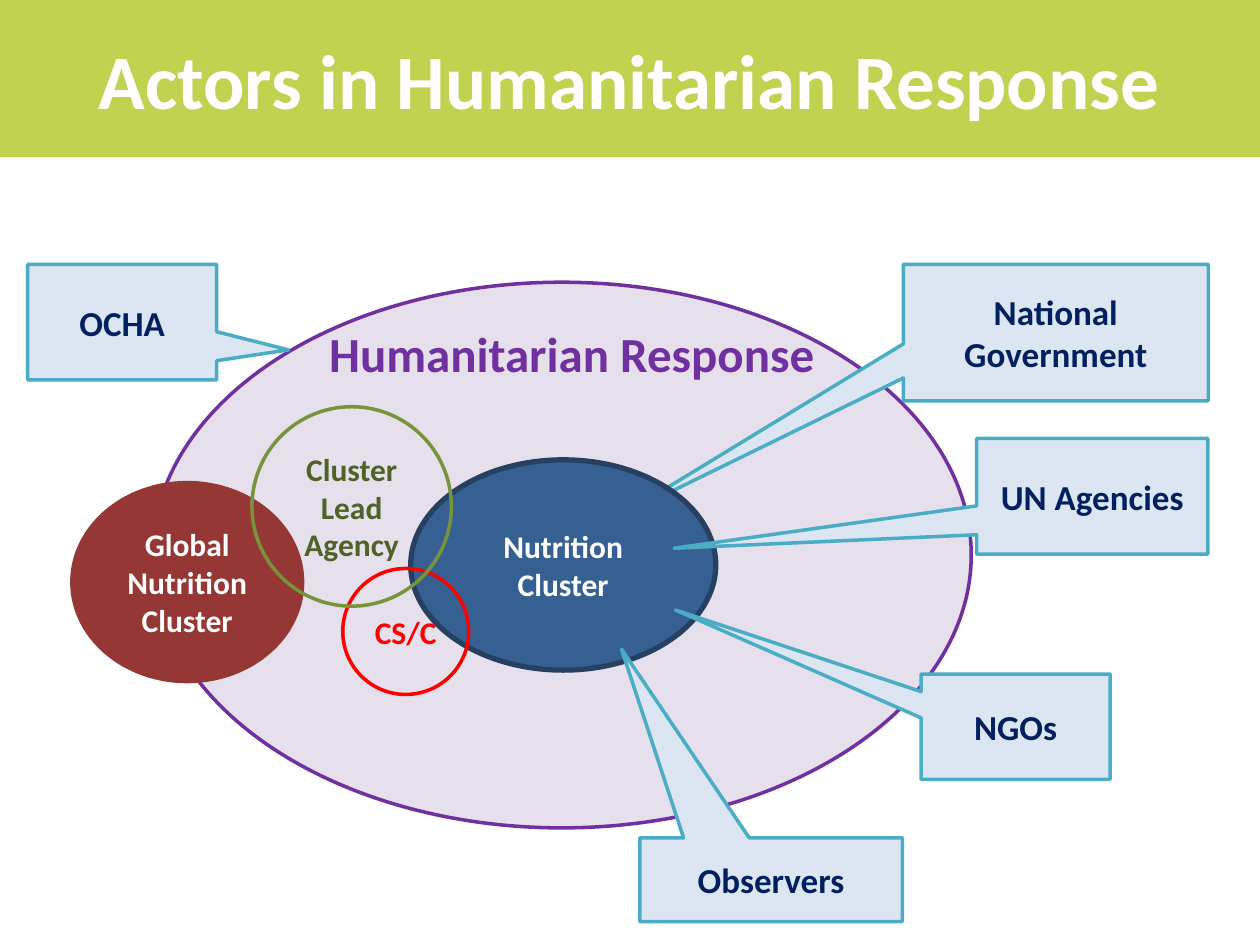
"""Build a slide mapping the actors in a humanitarian response."""
from dataclasses import dataclass

from pptx import Presentation
from pptx import util as u
from pptx.dml import color
from pptx.enum import shapes, text


@dataclass(frozen=True)
class Theme:
    """Colours and type sizes of the slide."""
    font: str = "Calibri"
    white: str = "FFFFFF"
    banner: str = "C1D150"
    response_fill: str = "E6E0EC"
    response: str = "7030A0"
    global_cluster: str = "953735"
    cluster_fill: str = "376092"
    cluster_line: str = "254061"
    lead_line: str = "77933C"
    lead_text: str = "4F6228"
    coordinator: str = "FF0000"
    actor_fill: str = "DCE6F2"
    actor_line: str = "4BACC6"
    actor_text: str = "002060"
    title_size: int = 44
    heading_size: int = 28
    actor_size: int = 20
    circle_size: int = 18


THEME = Theme()


def rgb(code):
    """Turn a hex code into a colour."""
    return color.RGBColor.from_string(code)


def place(box):
    """Turn left, top, width and height in centimetres into lengths."""
    return [u.Cm(value) for value in box]


def write(frame, wording, size, ink):
    """Put one centred bold run into a text frame."""
    frame.word_wrap = True
    frame.vertical_anchor = text.MSO_ANCHOR.MIDDLE
    paragraph = frame.paragraphs[0]
    paragraph.alignment = text.PP_ALIGN.CENTER
    run = paragraph.add_run()
    run.text = wording
    run.font.name = THEME.font
    run.font.size = u.Pt(size)
    run.font.bold = True
    run.font.color.rgb = rgb(ink)


def add_outlined(slide, preset, box, fill, line, weight=2):
    """Add a preset shape with an outline and an optional fill."""
    shape = slide.shapes.add_shape(preset, *place(box))
    shape.shadow.inherit = False
    if fill:
        shape.fill.solid()
        shape.fill.fore_color.rgb = rgb(fill)
    else:
        shape.fill.background()
    shape.line.color.rgb = rgb(line)
    shape.line.width = u.Pt(weight)
    return shape


def add_circle(slide, wording, box, fill, line, ink, weight=2):
    """Add a labelled ellipse."""
    circle = add_outlined(slide, shapes.MSO_SHAPE.OVAL, box, fill, line, weight)
    frame = circle.text_frame
    frame.margin_left = frame.margin_right = u.Cm(0.1)
    write(frame, wording, THEME.circle_size, ink)


def add_actor(slide, wording, box, tip):
    """Add a callout whose tip is an offset from its centre in box sizes."""
    actor = add_outlined(slide, shapes.MSO_SHAPE.RECTANGULAR_CALLOUT, box,
                         THEME.actor_fill, THEME.actor_line)
    actor.adjustments[0], actor.adjustments[1] = tip
    write(actor.text_frame, wording, THEME.actor_size, THEME.actor_text)


def add_title(slide, wording):
    """Turn the title placeholder into a full-width banner."""
    title = slide.shapes.title
    title.left, title.top, title.width, title.height = place((0, 0, 25.4, 3.17))
    title.fill.solid()
    title.fill.fore_color.rgb = rgb(THEME.banner)
    write(title.text_frame, wording, THEME.title_size, THEME.white)


def add_response(slide):
    """Add the large ellipse of the whole response and its heading."""
    add_outlined(slide, shapes.MSO_SHAPE.OVAL, (3.07, 5.69, 16.51, 11),
                 THEME.response_fill, THEME.response)
    heading = slide.shapes.add_textbox(*place((6.32, 6.4, 10.41, 1.45)))
    write(heading.text_frame, "Humanitarian Response",
          THEME.heading_size, THEME.response)


def main():
    """Build and save the slide."""
    deck = Presentation()
    deck.slide_width, deck.slide_height = u.Cm(25.4), u.Cm(19.05)
    slide = deck.slides.add_slide(deck.slide_layouts[5])
    add_title(slide, "Actors in Humanitarian Response")
    add_response(slide)
    add_circle(slide, "Global Nutrition Cluster", (1.45, 9.73, 4.65, 4.01),
               THEME.global_cluster, THEME.global_cluster, THEME.white)
    add_actor(slide, "National Government", (18.21, 5.33, 6.15, 2.75), (-1.43, 1.35))
    add_actor(slide, "OCHA", (0.56, 5.33, 3.81, 2.33), (0.88, 0.24))
    add_circle(slide, "Nutrition Cluster", (8.28, 9.27, 6.15, 4.24),
               THEME.cluster_fill, THEME.cluster_line, THEME.white, 3)
    add_actor(slide, "NGOs", (18.57, 13.59, 3.81, 2.12), (-1.8, -1.11))
    add_actor(slide, "UN Agencies", (19.69, 8.84, 4.66, 2.33), (-1.81, 0.45))
    add_circle(slide, "CS/C", (6.91, 11.46, 2.54, 2.54),
               None, THEME.coordinator, THEME.coordinator)
    add_actor(slide, "Observers", (12.9, 16.89, 5.29, 1.69), (-0.57, -2.75))
    add_circle(slide, "Cluster Lead Agency", (5.08, 8.2, 4.02, 4.02),
               None, THEME.lead_line, THEME.lead_text)
    deck.save("out.pptx")


if __name__ == "__main__":
    main()
